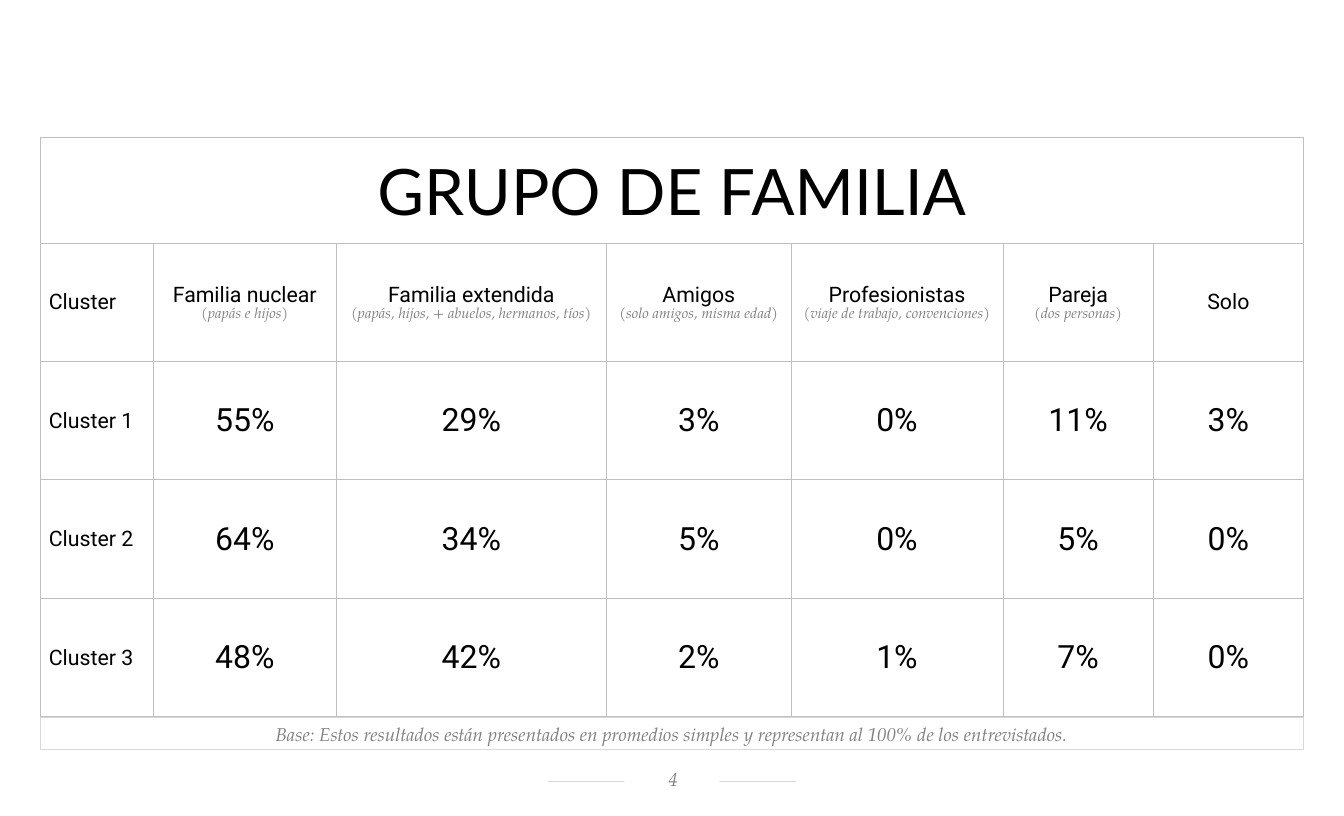
import pptx
import pptx.dml.color
import pptx.enum.shapes
import pptx.enum.text
import pptx.oxml
import pptx.oxml.ns
import pptx.util
from pptx.util import Pt

COLOURS = {"ink": "000000", "muted": "808080", "grid": "BFBFBF", "rule": "D9D9D9", "paper": "FFFFFF"}
TITLE_FONT, BODY_FONT, NOTE_FONT = "Lato", "Roboto", "TeX Gyre Pagella"
ALIGN = pptx.enum.text.PP_ALIGN
ANCHOR = pptx.enum.text.MSO_ANCHOR

TITLE = "GRUPO DE FAMILIA"
GROUPS = [
    ("Familia nuclear", "(papás e hijos)"),
    ("Familia extendida", "(papás, hijos, + abuelos, hermanos, tíos)"),
    ("Amigos", "(solo amigos, misma edad)"),
    ("Profesionistas", "(viaje de trabajo, convenciones)"),
    ("Pareja", "(dos personas)"),
    ("Solo", ""),
]
CLUSTERS = {
    "Cluster 1": (55, 29, 3, 0, 11, 3),
    "Cluster 2": (64, 34, 5, 0, 5, 0),
    "Cluster 3": (48, 42, 2, 1, 7, 0),
}
COLUMN_WIDTHS = [85, 136.8, 203, 138.2, 159.1, 112.7, 112.7]
TITLE_HEIGHT, ROW_HEIGHT = 79.2, 88.8


def rgb(name):
    return pptx.dml.color.RGBColor.from_string(COLOURS[name])


def write(para, text, font=BODY_FONT, size=16, colour="ink", italic=False, align=ALIGN.CENTER, indent=0):
    para.alignment = align
    if indent:
        properties = para._p.get_or_add_pPr()
        properties.set("marL", str(Pt(indent)))
        properties.set("indent", "0")
    span = para.add_run()
    span.text = text
    span.font.name = font
    span.font.size = Pt(size)
    span.font.italic = italic
    span.font.color.rgb = rgb(colour)


def write_note(para, text, size=14):
    write(para, text, font=NOTE_FONT, size=size, colour="muted", italic=True)


def style_cell(cell):
    """Clear the fill, tighten the margins and draw a thin border on all sides."""
    cell.fill.background()
    cell.vertical_anchor = ANCHOR.MIDDLE
    cell.margin_left = cell.margin_right = cell.margin_top = Pt(0.7)
    cell.margin_bottom = 0
    properties = cell._tc.get_or_add_tcPr()
    for position, side in enumerate("LRTB"):
        properties.insert(position, pptx.oxml.parse_xml(
            f'<a:ln{side} {pptx.oxml.ns.nsdecls("a")} w="{Pt(0.5)}"><a:solidFill>'
            f'<a:srgbClr val="{COLOURS["grid"]}"/></a:solidFill></a:ln{side}>'))


def add_family_table(page, left, top):
    heights = [TITLE_HEIGHT] + [ROW_HEIGHT] * (len(CLUSTERS) + 1)
    frame = page.shapes.add_table(len(heights), len(COLUMN_WIDTHS), Pt(left), Pt(top),
                                  Pt(sum(COLUMN_WIDTHS)), Pt(sum(heights)))
    table = frame.table
    table.first_row = table.horz_banding = False
    for column, width in zip(table.columns, COLUMN_WIDTHS):
        column.width = Pt(width)
    for row, height in zip(table.rows, heights):
        row.height = Pt(height)
    for cell in table.iter_cells():
        style_cell(cell)

    def first_para(row, column):
        return table.cell(row, column).text_frame.paragraphs[0]

    table.cell(0, 0).merge(table.cell(0, len(COLUMN_WIDTHS) - 1))
    write(first_para(0, 0), TITLE, font=TITLE_FONT, size=48)
    for row, label in enumerate(["Cluster", *CLUSTERS], start=1):
        write(first_para(row, 0), label, align=ALIGN.LEFT, indent=5.76)
    for column, (group, note) in enumerate(GROUPS, start=1):
        write(first_para(1, column), group)
        if note:
            write_note(table.cell(1, column).text_frame.add_paragraph(), note, size=11)
    for row, shares in enumerate(CLUSTERS.values(), start=2):
        for column, share in enumerate(shares, start=1):
            write(first_para(row, column), f"{share}%", size=24)


def add_note_box(page, left, top, width, height, text, anchor, line=None):
    """Add a white rectangle holding one line of italic grey text."""
    box = page.shapes.add_shape(pptx.enum.shapes.MSO_SHAPE.RECTANGLE,
                                Pt(left), Pt(top), Pt(width), Pt(height))
    box.shadow.inherit = False
    box.fill.solid()
    box.fill.fore_color.rgb = rgb("paper")
    if line:
        box.line.color.rgb = rgb(line)
        box.line.width = Pt(0.75)
    else:
        box.line.fill.background()
    box.text_frame.word_wrap = True
    box.text_frame.vertical_anchor = anchor
    write_note(box.text_frame.paragraphs[0], text)
    return box


def add_page_number(page, left, top, width, height, number):
    """Centre the number in a gap of a thin rule."""
    gap = 71.3
    rule = page.shapes.add_connector(pptx.enum.shapes.MSO_CONNECTOR.STRAIGHT, Pt(left), Pt(top + 11.5),
                                     Pt(left + width), Pt(top + 11.5))
    rule.line.color.rgb = rgb("rule")
    rule.line.width = Pt(0.5)
    rule._element.spPr.append(pptx.oxml.parse_xml(f'<a:effectLst {pptx.oxml.ns.nsdecls("a")}/>'))
    box = add_note_box(page, left + (width - gap) / 2, top, gap, height, number, ANCHOR.MIDDLE)
    frame = box.text_frame
    frame.margin_left, frame.margin_right = Pt(8.6), Pt(7.2)
    frame.margin_top, frame.margin_bottom = Pt(1.4), Pt(3.6)


def main():
    deck = pptx.Presentation()
    deck.slide_width, deck.slide_height = Pt(1008), Pt(612)
    page = deck.slides.add_slide(deck.slide_layouts[6])
    left, top, width = 30.24, 103, sum(COLUMN_WIDTHS)
    add_page_number(page, 411, 574.6, 186, 20.9, "4")
    base = add_note_box(
        page, left, 537.8, width, 24.5,
        "Base: Estos resultados están presentados en promedios simples y representan al 100% de los entrevistados.",
        ANCHOR.BOTTOM, line="rule")
    base.text_frame.auto_size = pptx.enum.text.MSO_AUTO_SIZE.SHAPE_TO_FIT_TEXT
    add_family_table(page, left, top)
    deck.save("out.pptx")


if __name__ == "__main__":
    main()
